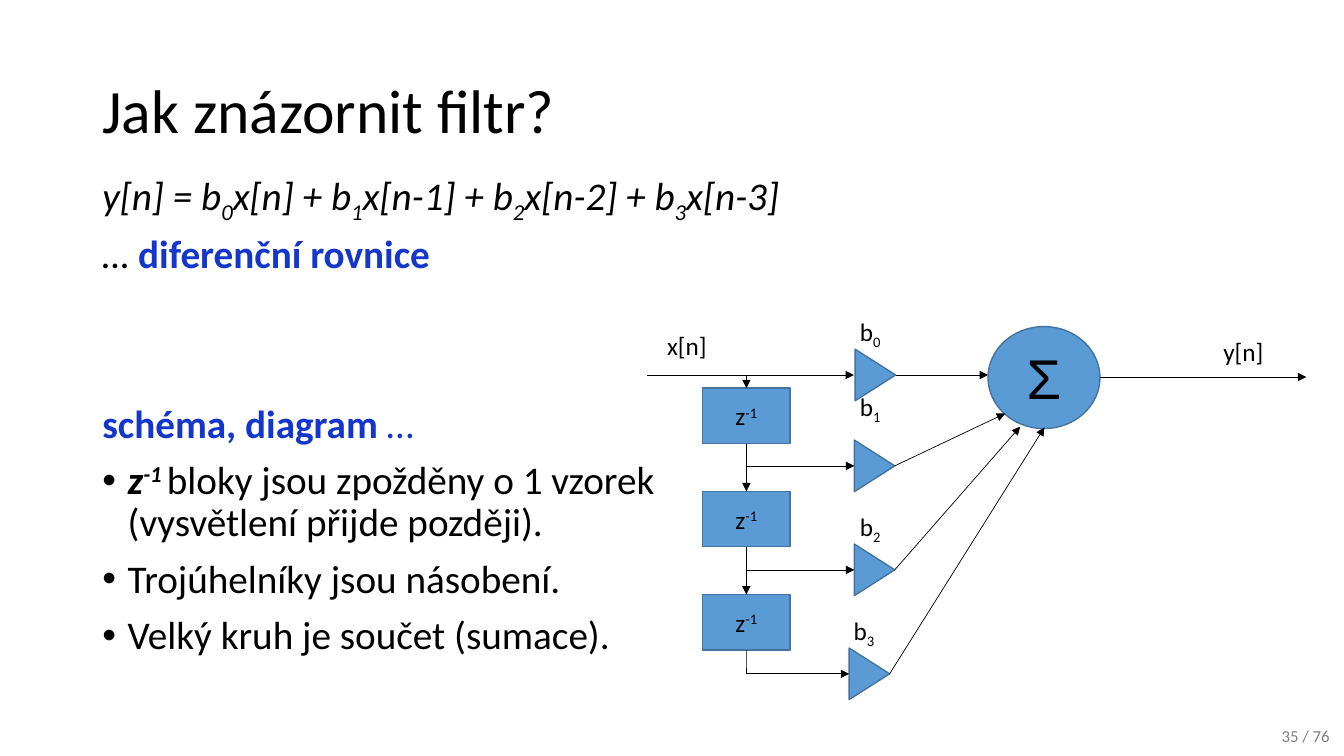
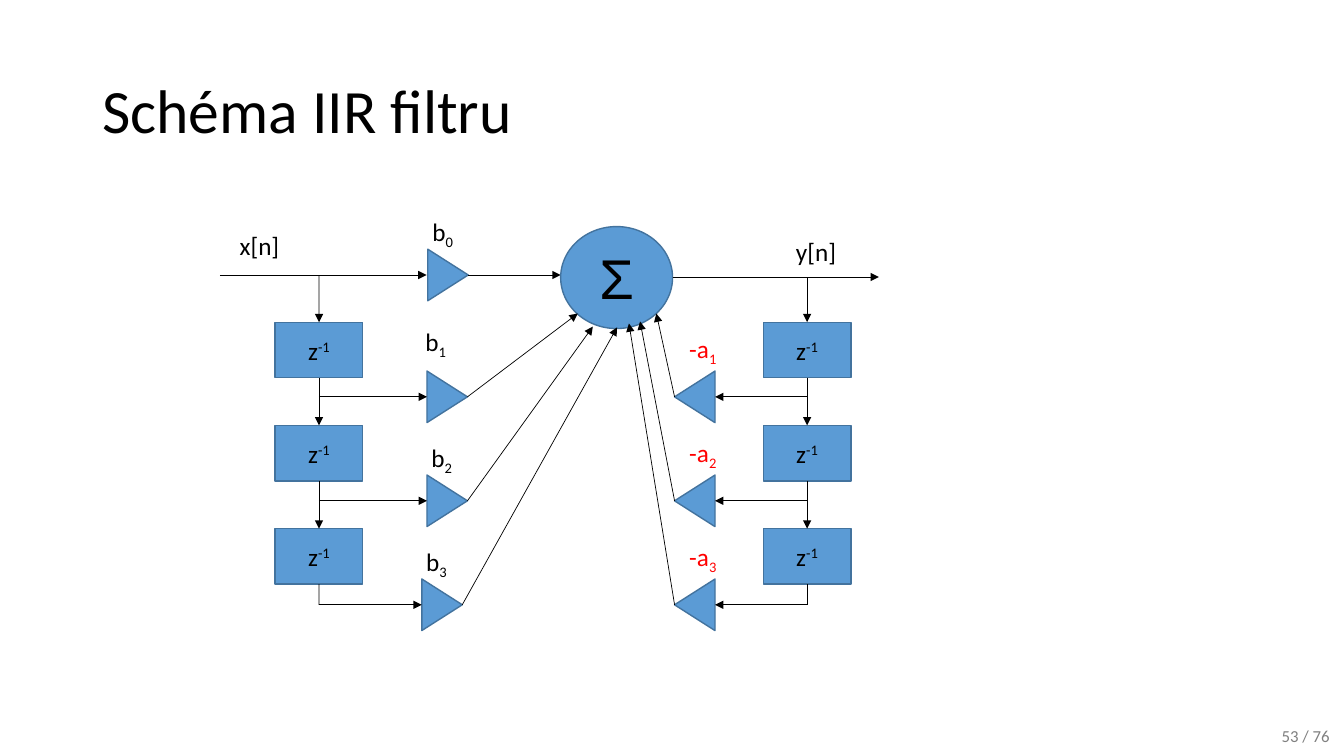
from lxml.etree import SubElement
from pptx import Presentation
from pptx.dml.color import RGBColor
from pptx.enum.shapes import MSO_CONNECTOR, MSO_SHAPE
from pptx.enum.text import MSO_ANCHOR, PP_ALIGN
from pptx.oxml.ns import qn
from pptx.util import Cm, Pt

BLACK = RGBColor(0x00, 0x00, 0x00)
BLUE = RGBColor(0x14, 0x36, 0xCA)
RED = RGBColor(0xFF, 0x00, 0x00)
GRAY = RGBColor(0x80, 0x80, 0x80)
FILL = RGBColor(0x5B, 0x9B, 0xD5)
OUTLINE = RGBColor(0x43, 0x73, 0x9E)

SUBSCRIPT, SUPERSCRIPT = -25000, 30000
BLOCK_WIDTH, BLOCK_HEIGHT, BLOCK_PITCH = 2.21, 1.4, 2.6
TRIANGLE_BASE, TRIANGLE_DEPTH, TAP_PITCH = 1.3, 1.02, 2.62
INPUT_TRUNK, OUTPUT_TRUNK, OUTPUT_LEVEL = 2.5, 14.8, 0.05

ITALIC = {"italic": True}
ITALIC_SUB = {"italic": True, "baseline": SUBSCRIPT}
KEYWORD = {"bold": True, "color": BLUE}

EQUATION = [("y[n] = b", ITALIC), ("0", ITALIC_SUB), ("x[n] + b", ITALIC),
            ("1", ITALIC_SUB), ("x[n-1] + b", ITALIC), ("2", ITALIC_SUB),
            ("x[n-2] + b", ITALIC), ("3", ITALIC_SUB), ("x[n-3]", ITALIC)]
BODY = [
    (EQUATION, 0, False),
    ([("… ", ITALIC), ("diferenční rovnice", KEYWORD)], 10, False),
    ([("schéma, diagram ", KEYWORD), ("…", {"color": BLUE})], 91, False),
    ([("z", {"bold": True, "italic": True}),
      ("-1 ", {"bold": True, "italic": True, "baseline": SUPERSCRIPT}),
      ("bloky jsou zpožděny o 1 vzorek\n(vysvětlení přijde později).", {})], 10, True),
    ([("Trojúhelníky jsou násobení.", {})], 10, True),
    ([("Velký kruh je součet (sumace).", {})], 10, True),
]

FORWARD_TRIANGLES = [5.22, 5.22, 5.09]
FORWARD_TARGETS = [(9.02, 0.97), (9.4, 1.3), (10.01, 1.32)]
FEEDBACK_TRIANGLES = [12.48, 12.48, 12.48]
FEEDBACK_TARGETS = [(11, 0.97), (10.59, 1.17), (10.31, 1.22)]
FEEDBACK_LABELS = [(11.58, -1.73)] * 3

SLIDES = [
    {"title": "Jak znázornit filtr?", "page": "35 / 76", "body": BODY,
     "origin": (16.31, 9.45), "ladder_top": 0.33, "first_tap": 2.29,
     "labels": [(5.11, -2.01), (5.11, -1.6), (4.95, -1.6)], "feedback": False},
    {"title": "Schéma IIR filtru", "page": "53 / 76", "body": [],
     "origin": (5.54, 6.93), "ladder_top": 1.19, "first_tap": 3.07,
     "labels": [(4.93, -1.9), (5.08, -1.6), (4.95, -1.6)], "feedback": True},
]


def add_run(paragraph, text, size, color=BLACK, bold=False, italic=False,
            baseline=0, name="Calibri"):
    """Add a styled run, breaking the line at each newline."""
    for index, piece in enumerate(text.split("\n")):
        if index:
            paragraph.add_line_break()
        run = paragraph.add_run()
        run.text = piece
        font = run.font
        font.name, font.size, font.bold, font.italic = name, Pt(size), bold, italic
        font.color.rgb = color
        if baseline:
            run._r.get_or_add_rPr().set("baseline", str(baseline))


def add_text_box(slide, left, top, width, height):
    """Add a wrapping text box and return its text frame."""
    frame = slide.shapes.add_textbox(Cm(left), Cm(top), Cm(width), Cm(height)).text_frame
    frame.word_wrap = True
    return frame


def add_title(slide, text):
    """Add the slide title."""
    frame = add_text_box(slide, 2.33, 1.01, 29.21, 3.68)
    frame.vertical_anchor = MSO_ANCHOR.MIDDLE
    frame.paragraphs[0].line_spacing = 0.9
    add_run(frame.paragraphs[0], text, 44)


def add_page_number(slide, text):
    """Add the page number at the lower right."""
    paragraph = add_text_box(slide, 31.55, 18.16, 2.21, 0.84).paragraphs[0]
    paragraph.alignment = PP_ALIGN.RIGHT
    add_run(paragraph, text, 12, GRAY)


def add_body(slide, lines):
    """Add the explanatory text with its bullets."""
    frame = add_text_box(slide, 2.33, 4.22, 29.21, 13.26)
    for index, (runs, space, bulleted) in enumerate(lines):
        paragraph = frame.add_paragraph() if index else frame.paragraphs[0]
        paragraph.line_spacing = 0.9
        if space:
            paragraph.space_before = Pt(space)
        if bulleted:
            properties = paragraph._p.get_or_add_pPr()
            properties.set("marL", str(Cm(0.64)))
            properties.set("indent", str(-Cm(0.64)))
            SubElement(properties, qn("a:buFont"), typeface="Arial")
            SubElement(properties, qn("a:buChar"), char="•")
        for text, style in runs:
            add_run(paragraph, text, 28, **style)


class Diagram:
    """Draws filter parts relative to the start of the input line."""

    def __init__(self, slide, origin):
        self.slide = slide
        self.left, self.top = origin

    def line(self, start, end, arrow=True):
        """Draw a thin line between two points."""
        connector = self.slide.shapes.add_connector(
            MSO_CONNECTOR.STRAIGHT, Cm(self.left + start[0]), Cm(self.top + start[1]),
            Cm(self.left + end[0]), Cm(self.top + end[1]))
        connector.line.color.rgb = BLACK
        connector.line.width = Pt(0.5)
        SubElement(connector._element.spPr, qn("a:effectLst"))
        if arrow:
            SubElement(connector.line._get_or_add_ln(), qn("a:tailEnd"), type="triangle")
        return connector

    def shape(self, kind, left, top, width, height):
        """Draw a filled shape with centred text."""
        shape = self.slide.shapes.add_shape(
            kind, Cm(self.left + left), Cm(self.top + top), Cm(width), Cm(height))
        shape.shadow.inherit = False
        shape.fill.solid()
        shape.fill.fore_color.rgb = FILL
        shape.line.color.rgb = OUTLINE
        shape.line.width = Pt(1)
        shape.text_frame.vertical_anchor = MSO_ANCHOR.MIDDLE
        shape.text_frame.paragraphs[0].alignment = PP_ALIGN.CENTER
        return shape

    def label(self, left, top, text, subscript="", color=BLACK, width=2.34):
        """Write a signal or coefficient name."""
        frame = add_text_box(self.slide, self.left + left, self.top + top, width, 1.02)
        add_run(frame.paragraphs[0], text, 18, color)
        if subscript:
            add_run(frame.paragraphs[0], subscript, 18, color, baseline=SUBSCRIPT)

    def triangle(self, near, level, direction=1):
        """Draw a multiplier and return the position of its tip."""
        centre = near + direction * TRIANGLE_DEPTH / 2
        shape = self.shape(MSO_SHAPE.FLOWCHART_EXTRACT, centre - TRIANGLE_BASE / 2,
                           level - TRIANGLE_DEPTH / 2, TRIANGLE_BASE, TRIANGLE_DEPTH)
        shape.rotation = 90 if direction == 1 else 270
        return near + direction * TRIANGLE_DEPTH, level

    def delay(self, trunk, top):
        """Draw a delay block centred on its trunk."""
        block = self.shape(MSO_SHAPE.RECTANGLE, trunk - BLOCK_WIDTH / 2, top,
                           BLOCK_WIDTH, BLOCK_HEIGHT)
        paragraph = block.text_frame.paragraphs[0]
        add_run(paragraph, "z", 18)
        add_run(paragraph, "-1", 18, baseline=SUPERSCRIPT)
        return block

    def ladder(self, trunk, level, top, first_tap, triangles, targets, labels,
               name, color=BLACK, direction=1):
        """Draw a delay chain whose taps are multiplied and summed."""
        previous = None
        for index, (near, target, (label_left, label_shift)) in enumerate(
                zip(triangles, targets, labels)):
            block_top = top + index * BLOCK_PITCH
            tap = first_tap + index * TAP_PITCH
            block = self.delay(trunk, block_top)
            arrow = self.line((trunk, level), (trunk, block_top))
            if previous is not None:
                arrow.begin_connect(previous, 2)
            arrow.end_connect(block, 0)
            tip = self.triangle(near, tap, direction)
            self.line((trunk, tap), (near, tap))
            self.line(tip, target)
            self.label(label_left, tap + label_shift, name, str(index + 1), color,
                       1.14 if direction == 1 else 1.4)
            previous, level = block, block_top + BLOCK_HEIGHT
        self.line((trunk, level), (trunk, tap), arrow=False).begin_connect(previous, 2)

    def main_path(self):
        """Draw the input, first multiplier, sum and output."""
        self.line((0, 0), (5.21, 0))
        tip = self.triangle(5.24, 0)
        self.line(tip, (8.59, 0))
        total = self.shape(MSO_SHAPE.OVAL, 8.59, -1.22, 2.82, 2.57)
        add_run(total.text_frame.paragraphs[0], "Σ", 40, name="Arial")
        self.line((11.41, OUTPUT_LEVEL), (16.61, OUTPUT_LEVEL))
        self.label(0.25, -1.24, "x[n]")
        self.label(5.11, -1.6, "b", "0", width=1.14)
        self.label(14.27, -1.09, "y[n]")


def main():
    """Build and save the presentation."""
    presentation = Presentation()
    presentation.slide_width, presentation.slide_height = Cm(33.87), Cm(19.05)
    for content in SLIDES:
        slide = presentation.slides.add_slide(presentation.slide_layouts[6])
        add_title(slide, content["title"])
        if content["body"]:
            add_body(slide, content["body"])
        diagram = Diagram(slide, content["origin"])
        diagram.main_path()
        top, first_tap = content["ladder_top"], content["first_tap"]
        diagram.ladder(INPUT_TRUNK, 0, top, first_tap, FORWARD_TRIANGLES,
                       FORWARD_TARGETS, content["labels"], "b")
        if content["feedback"]:
            diagram.ladder(OUTPUT_TRUNK, OUTPUT_LEVEL, top, first_tap, FEEDBACK_TRIANGLES,
                           FEEDBACK_TARGETS, FEEDBACK_LABELS, "-a", RED, -1)
        add_page_number(slide, content["page"])
    presentation.save("out.pptx")


if __name__ == "__main__":
    main()
